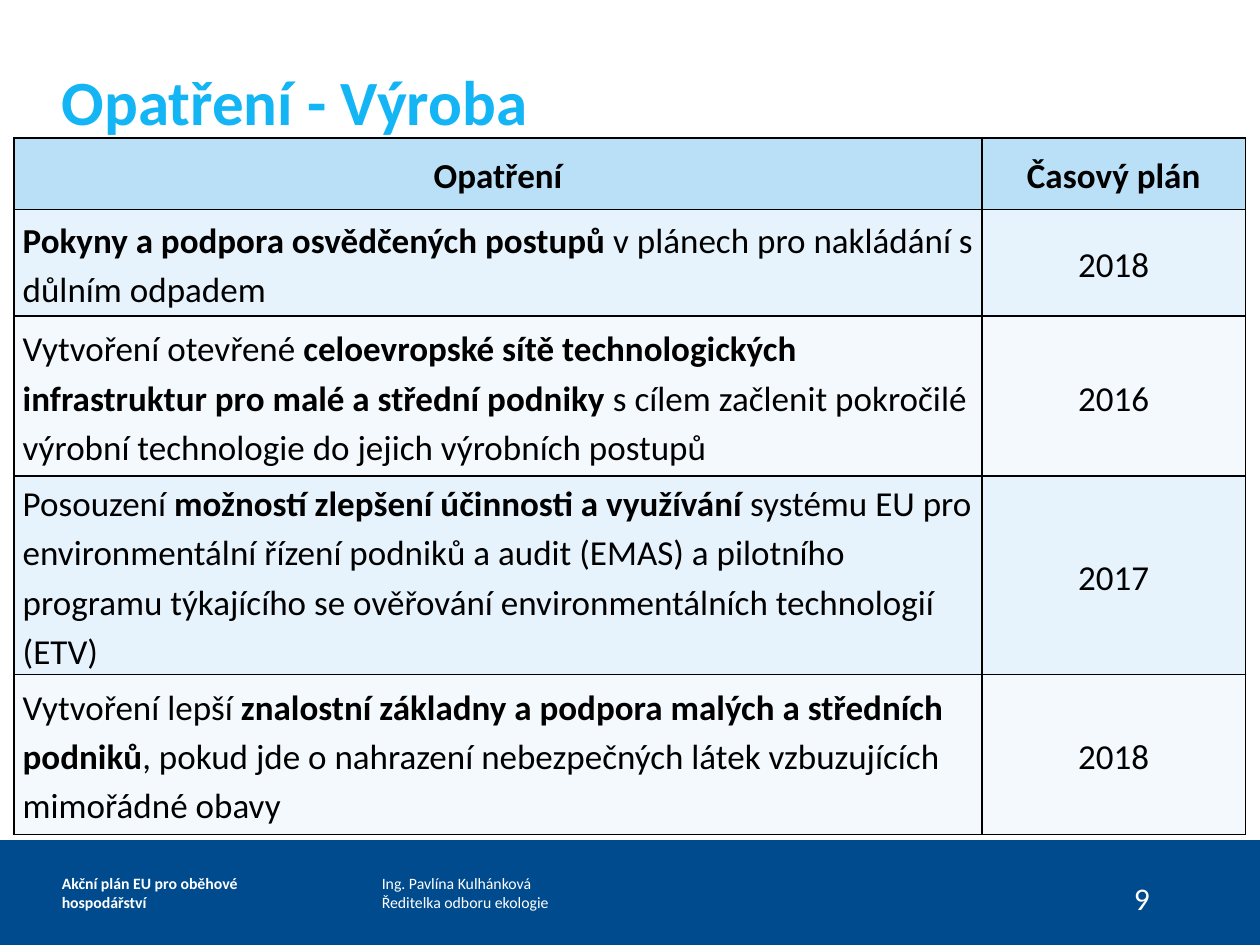
"""Build the slide listing production measures and their timetable."""
from lxml.etree import SubElement
from pptx import Presentation
from pptx.dml.color import RGBColor
from pptx.enum.shapes import MSO_SHAPE as Shape
from pptx.enum.text import MSO_ANCHOR as Anchor, MSO_AUTO_SIZE as AutoSize, PP_ALIGN as Align
from pptx.oxml.ns import qn
from pptx.util import Pt

COLORS = {"navy": "004B8D", "white": "FFFFFF", "black": "000000", "sky": "13B5F4",
          "header": "B9E0F7", "odd": "E6F3FC", "even": "F3F9FD"}
FONT = "Calibri"
TITLE = "Opatření - Výroba"
HEADER = ("Opatření", "Časový plán")
MEASURES = [
    ([("Pokyny a podpora osvědčených postupů", True),
      (" v plánech pro nakládání s důlním odpadem", False)], "2018"),
    ([("Vytvoření otevřené ", False),
      ("celoevropské sítě technologických infrastruktur pro malé a střední podniky", True),
      (" s cílem začlenit pokročilé výrobní technologie do jejich výrobních postupů", False)],
     "2016"),
    ([("Posouzení ", False),
      ("možností zlepšení účinnosti a využívání", True),
      (" systému EU pro environmentální řízení podniků a audit (EMAS) a pilotního programu "
       "týkajícího se ověřování environmentálních technologií (ETV)", False)], "2017"),
    ([("Vytvoření lepší ", False),
      ("znalostní základny a podpora malých a středních podniků", True),
      (", pokud jde o nahrazení nebezpečných látek vzbuzujících mimořádné obavy", False)],
     "2018"),
]
FOOTERS = [
    (["Ing. Pavlína Kulhánková", "Ředitelka odboru ekologie"],
     (218.2, 480, 141.8, 60), {"size": 9}),
    (["Akční plán EU pro oběhové hospodářství"],
     (35.3, 480, 147.6, 60), {"size": 9, "bold": True}),
]
PAGE_NUMBER = (["9"], (640.8, 499, 36, 28.8), {"size": 18})
TABLE_AREA = (8, 78.8, 703.7, 398.2)
COLUMN_WIDTHS = (553.2, 150.5)
ROW_HEIGHTS = (40.8, 61, 91.5, 113.4, 91.5)


def rgb(name):
    return RGBColor.from_string(COLORS[name])


def points(values):
    return [Pt(value) for value in values]


def write(frame, paragraphs, size, color, bold=False, align=Align.LEFT, spacing=None):
    """Fill a text frame with paragraphs, each a string or a list of (text, bold) spans."""
    for index, content in enumerate(paragraphs):
        para = frame.add_paragraph() if index else frame.paragraphs[0]
        para.alignment = align
        para.line_spacing = spacing
        spans = [(content, bold)] if isinstance(content, str) else content
        for text, is_bold in spans:
            span = para.add_run()
            span.text = text
            span.font.name = FONT
            span.font.size = Pt(size)
            span.font.bold = is_bold
            span.font.color.rgb = rgb(color)


def clear_margins(frame):
    frame.margin_left = frame.margin_right = frame.margin_top = frame.margin_bottom = 0
    frame.vertical_anchor = Anchor.MIDDLE


def add_text(page, paragraphs, area, flush=True, **style):
    frame = page.shapes.add_textbox(*points(area)).text_frame
    frame.word_wrap = True
    if flush:
        clear_margins(frame)
    write(frame, paragraphs, color="white", **style)


def fill_cell(cell, content, fill, **style):
    properties = cell._tc.get_or_add_tcPr()
    for side in ("lnL", "lnR", "lnT", "lnB"):
        line = SubElement(properties, qn(f"a:{side}"), w=str(Pt(1)))
        SubElement(SubElement(line, qn("a:solidFill")), qn("a:srgbClr"), val=COLORS["black"])
    cell.fill.solid()
    cell.fill.fore_color.rgb = rgb(fill)
    cell.margin_left = cell.margin_right = Pt(5)
    cell.margin_top = cell.margin_bottom = 0
    cell.vertical_anchor = Anchor.MIDDLE
    write(cell.text_frame, [content], size=20, color="black", spacing=1.15, **style)


def add_measures(page):
    table = page.shapes.add_table(len(ROW_HEIGHTS), len(COLUMN_WIDTHS),
                                  *points(TABLE_AREA)).table
    for column, width in zip(table.columns, COLUMN_WIDTHS):
        column.width = Pt(width)
    for row, height in zip(table.rows, ROW_HEIGHTS):
        row.height = Pt(height)
    for index, heading in enumerate(HEADER):
        fill_cell(table.cell(0, index), heading, "header", bold=True, align=Align.CENTER)
    for index, (measure, year) in enumerate(MEASURES, start=1):
        fill = "odd" if index % 2 else "even"
        fill_cell(table.cell(index, 0), measure, fill)
        fill_cell(table.cell(index, 1), year, fill, align=Align.CENTER)


def place_title(page):
    title = page.shapes.title
    title.left, title.top, title.width, title.height = points((35.3, 35.3, 648.7, 43.9))
    frame = title.text_frame
    frame.word_wrap = True
    frame.auto_size = AutoSize.SHAPE_TO_FIT_TEXT
    clear_margins(frame)
    write(frame, [TITLE], size=36, color="sky", bold=True)
    title._element.getparent().append(title._element)


def main():
    deck = Presentation()
    deck.slide_width, deck.slide_height = Pt(720), Pt(540)
    page = deck.slides.add_slide(deck.slide_layouts[5])
    page.background.fill.solid()
    page.background.fill.fore_color.rgb = rgb("navy")

    panel = page.shapes.add_shape(Shape.RECTANGLE, *points((0, 0, 720, 480)))
    panel.shadow.inherit = False
    panel.fill.solid()
    panel.fill.fore_color.rgb = rgb("white")
    panel.line.fill.background()

    for paragraphs, area, style in FOOTERS:
        add_text(page, paragraphs, area, **style)
    paragraphs, area, style = PAGE_NUMBER
    add_text(page, paragraphs, area, flush=False, **style)
    add_measures(page)
    place_title(page)
    deck.save("out.pptx")


if __name__ == "__main__":
    main()
